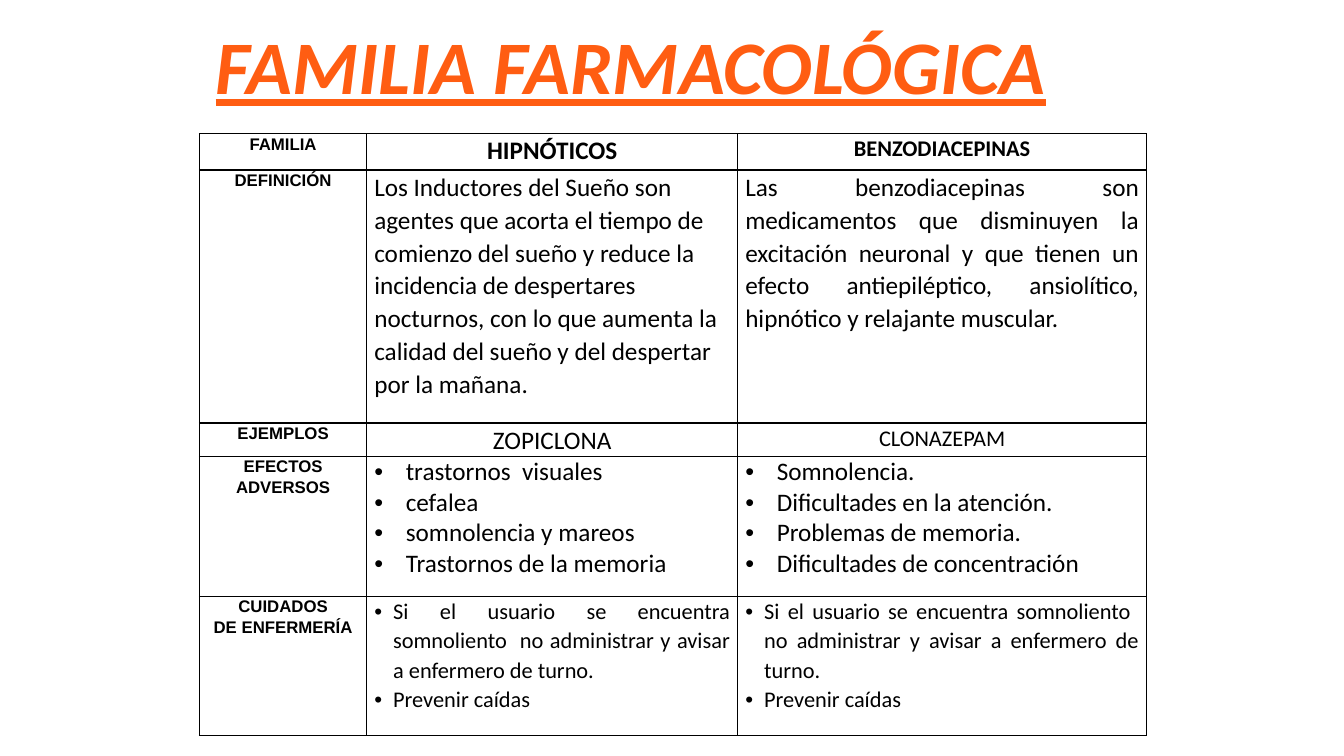
import pptx
import pptx.dml.color
import pptx.enum.text
import pptx.oxml
import pptx.oxml.ns
import pptx.util

Pt = pptx.util.Pt
ALIGN = pptx.enum.text.PP_ALIGN
BLACK = "000000"
COLUMNS = [119.5, 265, 292]
ROWS = [26, 180.7, 23.8, 100, 99.4]
LABELS = ["FAMILIA", "DEFINICIÓN", "EJEMPLOS", "EFECTOS ADVERSOS", "CUIDADOS\nDE ENFERMERÍA"]
CARE = "Si el usuario se encuentra somnoliento  no administrar y avisar a enfermero de turno.\nPrevenir caídas"
HYPNOTICS = [
    ("HIPNÓTICOS", dict(bold=True, align=ALIGN.CENTER)),
    ("Los Inductores del Sueño son agentes que acorta el tiempo de comienzo del sueño "
     "y reduce la incidencia de despertares nocturnos, con lo que aumenta la calidad "
     "del sueño y del despertar por la mañana.", dict()),
    ("ZOPICLONA", dict(align=ALIGN.CENTER)),
    ("trastornos  visuales\ncefalea\nsomnolencia y mareos\nTrastornos de la memoria",
     dict(indent=22.5, spacing=1.0)),
    (CARE, dict(size=16, align=ALIGN.JUSTIFY, indent=13.5)),
]
BENZODIAZEPINES = [
    ("BENZODIACEPINAS", dict(size=16, bold=True, align=ALIGN.CENTER)),
    ("Las benzodiacepinas son medicamentos que disminuyen la excitación neuronal y que "
     "tienen un efecto antiepiléptico, ansiolítico, hipnótico y relajante muscular.",
     dict(align=ALIGN.JUSTIFY)),
    ("CLONAZEPAM", dict(size=16, align=ALIGN.CENTER)),
    ("Somnolencia.\nDificultades en la atención.\nProblemas de memoria.\nDificultades de concentración",
     dict(indent=22.5, spacing=1.0)),
    (CARE, dict(size=16, align=ALIGN.JUSTIFY, indent=13.5)),
]


def rgb(color):
    return pptx.dml.color.RGBColor.from_string(color)


def xml(markup):
    tag, rest = markup.split(" ", 1)
    return pptx.oxml.parse_xml(f"{tag} {pptx.oxml.ns.nsdecls('a')} {rest}")


def add_bullet(p, indent):
    pPr = p._p.get_or_add_pPr()
    pPr.set("marL", str(Pt(indent)))
    pPr.set("indent", str(-Pt(indent)))
    pPr.append(xml('<a:buFont typeface="Arial"/>'))
    pPr.append(xml('<a:buChar char="•"/>'))


def write(tf, text, size=18, font="Calibri", color=BLACK, bold=False, italic=False,
          underline=False, align=ALIGN.LEFT, spacing=1.07, indent=0):
    for i, line in enumerate(text.split("\n")):
        p = tf.paragraphs[0] if i == 0 else tf.add_paragraph()
        p.alignment = align
        p.line_spacing = spacing
        if indent:
            add_bullet(p, indent)
        r = p.add_run()
        r.text = line
        f = r.font
        f.name, f.size = font, Pt(size)
        f.bold, f.italic, f.underline = bold, italic, underline
        f.color.rgb = rgb(color)


def add_borders(cell):
    tcPr = cell._tc.get_or_add_tcPr()
    for i, side in enumerate("LRTB"):
        tcPr.insert(i, xml(f'<a:ln{side} w="{Pt(1)}"><a:solidFill><a:srgbClr val="{BLACK}"/>'
                           f'</a:solidFill></a:ln{side}>'))


def fill_cell(cell, text, **style):
    cell.margin_left = cell.margin_right = Pt(5.4)
    cell.margin_top = cell.margin_bottom = Pt(0)
    cell.fill.background()
    add_borders(cell)
    write(cell.text_frame, text, **style)


def add_title(s, text):
    sp = s.shapes.add_textbox(Pt(142.5), Pt(10), Pt(616.5), Pt(72.7))
    tf = sp.text_frame
    tf.word_wrap = False
    write(tf, text, size=54, color="FF5D12", bold=True, italic=True, underline=True,
          align=ALIGN.CENTER, spacing=1.0)


def add_family_table(s):
    frame = s.shapes.add_table(len(ROWS), len(COLUMNS), Pt(142.5), Pt(95.5),
                               Pt(sum(COLUMNS)), Pt(sum(ROWS)))
    table = frame.table
    table.first_row = table.horz_banding = False
    for column, width in zip(table.columns, COLUMNS):
        column.width = Pt(width)
    for row, height in zip(table.rows, ROWS):
        row.height = Pt(height)
    label_style = dict(size=12, font="Arial", bold=True, align=ALIGN.CENTER)
    labels = [(label, label_style) for label in LABELS]
    for j, entries in enumerate([labels, HYPNOTICS, BENZODIAZEPINES]):
        for i, (text, style) in enumerate(entries):
            fill_cell(table.cell(i, j), text, **style)


def main():
    prs = pptx.Presentation()
    prs.slide_width, prs.slide_height = Pt(960), Pt(540)
    s = prs.slides.add_slide(prs.slide_layouts[6])
    add_family_table(s)
    add_title(s, "FAMILIA FARMACOLÓGICA")
    prs.save("out.pptx")


if __name__ == "__main__":
    main()
